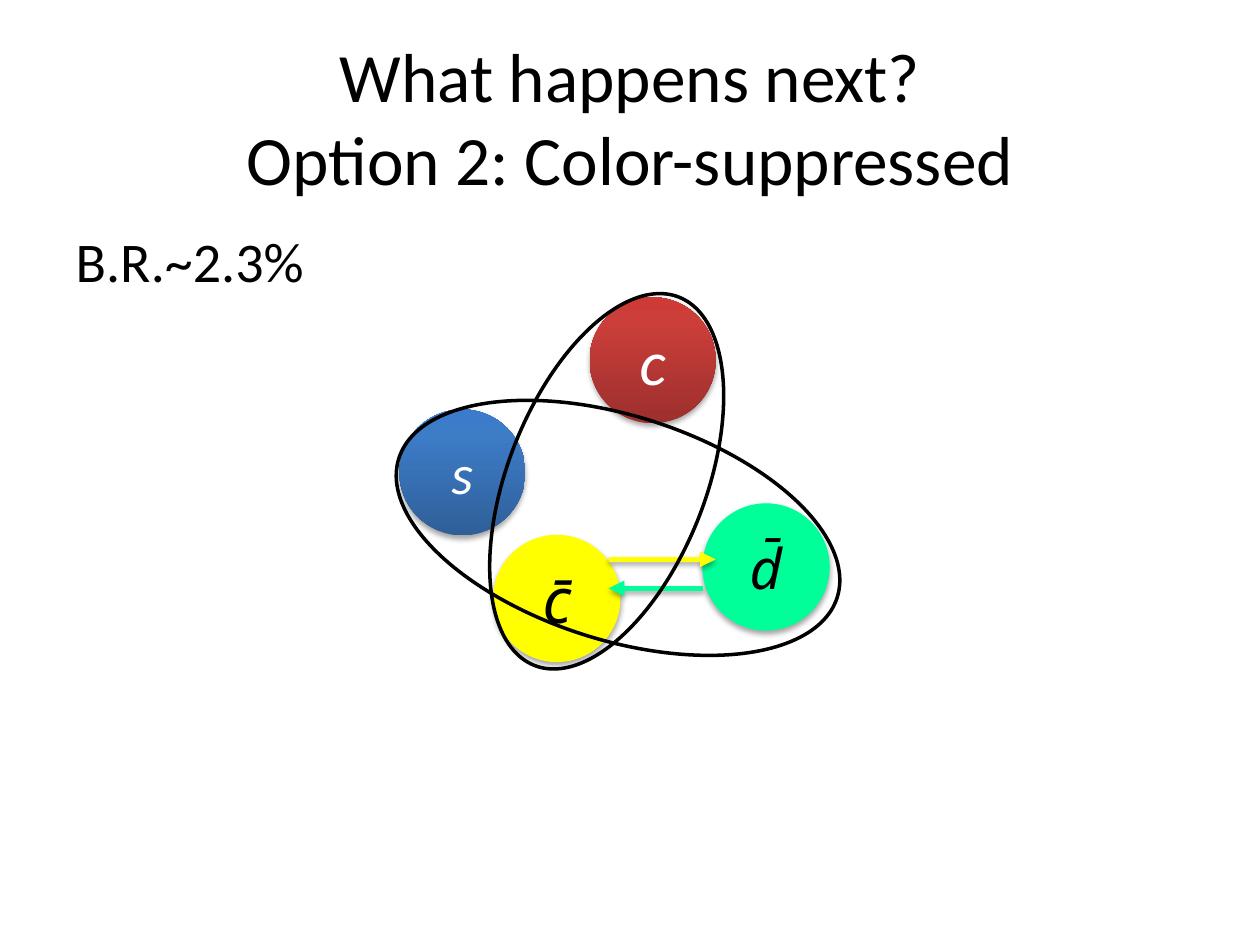
from lxml.etree import SubElement
from pptx import Presentation
from pptx.dml.color import RGBColor
from pptx.enum.shapes import MSO_CONNECTOR, MSO_SHAPE
from pptx.enum.text import MSO_ANCHOR, MSO_AUTO_SIZE, PP_ALIGN
from pptx.oxml.ns import qn
from pptx.util import Inches, Pt

BLACK = RGBColor(0x00, 0x00, 0x00)
WHITE = RGBColor(0xFF, 0xFF, 0xFF)
YELLOW = RGBColor(0xFF, 0xFF, 0x00)
GREEN = RGBColor(0x00, 0xFF, 0x99)
# Gradient stops from bottom to top
RED_STOPS = [RGBColor(0x9C, 0x2F, 0x2D), RGBColor(0xCB, 0x3E, 0x3A), RGBColor(0xCE, 0x3B, 0x37)]
BLUE_STOPS = [RGBColor(0x2F, 0x5F, 0x99), RGBColor(0x3D, 0x7C, 0xC7), RGBColor(0x3A, 0x7C, 0xCB)]
STOP_POSITIONS = [0, 80000, 100000]

deck = Presentation()
deck.slide_width, deck.slide_height = Inches(10), Inches(7.5)
page = deck.slides.add_slide(deck.slide_layouts[1])
# Grid of 10 columns and 7.5 rows with square cells
CELL = deck.slide_width // 10


def add_span(para, text, size, color, italic=None):
    span = para.add_run()
    span.text = text
    span.font.name = "Calibri"
    span.font.size = Pt(size)
    span.font.color.rgb = color
    span.font.italic = italic


def add_shadow(item):
    properties = item._element.spPr
    effects = properties.find(qn("a:effectLst"))
    if effects is None:
        effects = SubElement(properties, qn("a:effectLst"))
    shadow = SubElement(effects, qn("a:outerShdw"), blurRad="40000", dist="23000",
                        dir="5400000", rotWithShape="0")
    color = SubElement(shadow, qn("a:srgbClr"), val="000000")
    SubElement(color, qn("a:alpha"), val="35000")


# Title and body placeholders
title, body = page.shapes.title, page.placeholders[1]
for box, top, height in [(title, 0.3, 1.25), (body, 1.75, 4.95)]:
    box.left, box.width = int(0.5 * CELL), 9 * CELL
    box.top, box.height = int(top * CELL), int(height * CELL)
    box.text_frame.auto_size = MSO_AUTO_SIZE.NONE

title.text_frame.vertical_anchor = MSO_ANCHOR.MIDDLE
para = title.text_frame.paragraphs[0]
para.alignment = PP_ALIGN.CENTER
add_span(para, "What happens next?", 39.6, BLACK)
para.add_line_break()
add_span(para, "Option 2: Color-suppressed", 39.6, BLACK)

para = body.text_frame.paragraphs[0]
add_span(para, "B.R.~2.3%", 32, BLACK)
settings = para._p.get_or_add_pPr()
settings.set("marL", "0")
settings.set("indent", "0")
SubElement(settings, qn("a:buNone"))

# Quarks: left, top, label, size, text colour, fill (one colour or gradient stops)
quarks = [
    (5.58, 4.00, "d̄", 32, BLACK, GREEN),
    (4.68, 2.36, "c", 36, WHITE, RED_STOPS),
    (3.17, 3.25, "s", 32, WHITE, BLUE_STOPS),
    (3.92, 4.25, "c̄", 36, BLACK, YELLOW),
]
for left, top, label, size, text_color, fill in quarks:
    quark = page.shapes.add_shape(MSO_SHAPE.OVAL, int(left * CELL), int(top * CELL), CELL, CELL)
    quark.shadow.inherit = False
    add_shadow(quark)
    if isinstance(fill, list):
        quark.fill.gradient()
        quark.fill.gradient_angle = 90
        stops = quark._element.spPr.find(qn("a:gradFill")).find(qn("a:gsLst"))
        for stop in list(stops):
            stops.remove(stop)
        for position, color in zip(STOP_POSITIONS, fill):
            stop = SubElement(stops, qn("a:gs"), pos=str(position))
            SubElement(stop, qn("a:srgbClr"), val=str(color))
        quark.line.fill.background()
    else:
        quark.fill.solid()
        quark.fill.fore_color.rgb = fill
        quark.line.color.rgb = fill
        quark.line.width = Pt(0.75)
    quark.text_frame.vertical_anchor = MSO_ANCHOR.MIDDLE
    para = quark.text_frame.paragraphs[0]
    para.alignment = PP_ALIGN.CENTER
    add_span(para, label, size, text_color, italic=True)

# Colour exchange arrows: start, end, height on the page, colour
for start, end, level, color in [(4.83, 5.68, 4.44, YELLOW), (5.58, 4.83, 4.67, GREEN)]:
    arrow = page.shapes.add_connector(MSO_CONNECTOR.STRAIGHT, int(start * CELL), int(level * CELL),
                                      int(end * CELL), int(level * CELL))
    arrow.line.color.rgb = color
    arrow.line.width = Pt(3)
    SubElement(arrow.line._get_or_add_ln(), qn("a:tailEnd"), type="triangle")
    add_shadow(arrow)

# Meson outlines around the quark pairs
for left, top, width, height, angle in [(4.03, 2.25, 1.57, 3.14, 21.4), (3.08, 3.3, 3.65, 1.78, 17.6)]:
    meson = page.shapes.add_shape(MSO_SHAPE.OVAL, int(left * CELL), int(top * CELL),
                                  int(width * CELL), int(height * CELL))
    meson.rotation = angle
    meson.shadow.inherit = False
    meson.fill.background()
    meson.line.color.rgb = BLACK
    meson.line.width = Pt(2)

deck.save("out.pptx")
